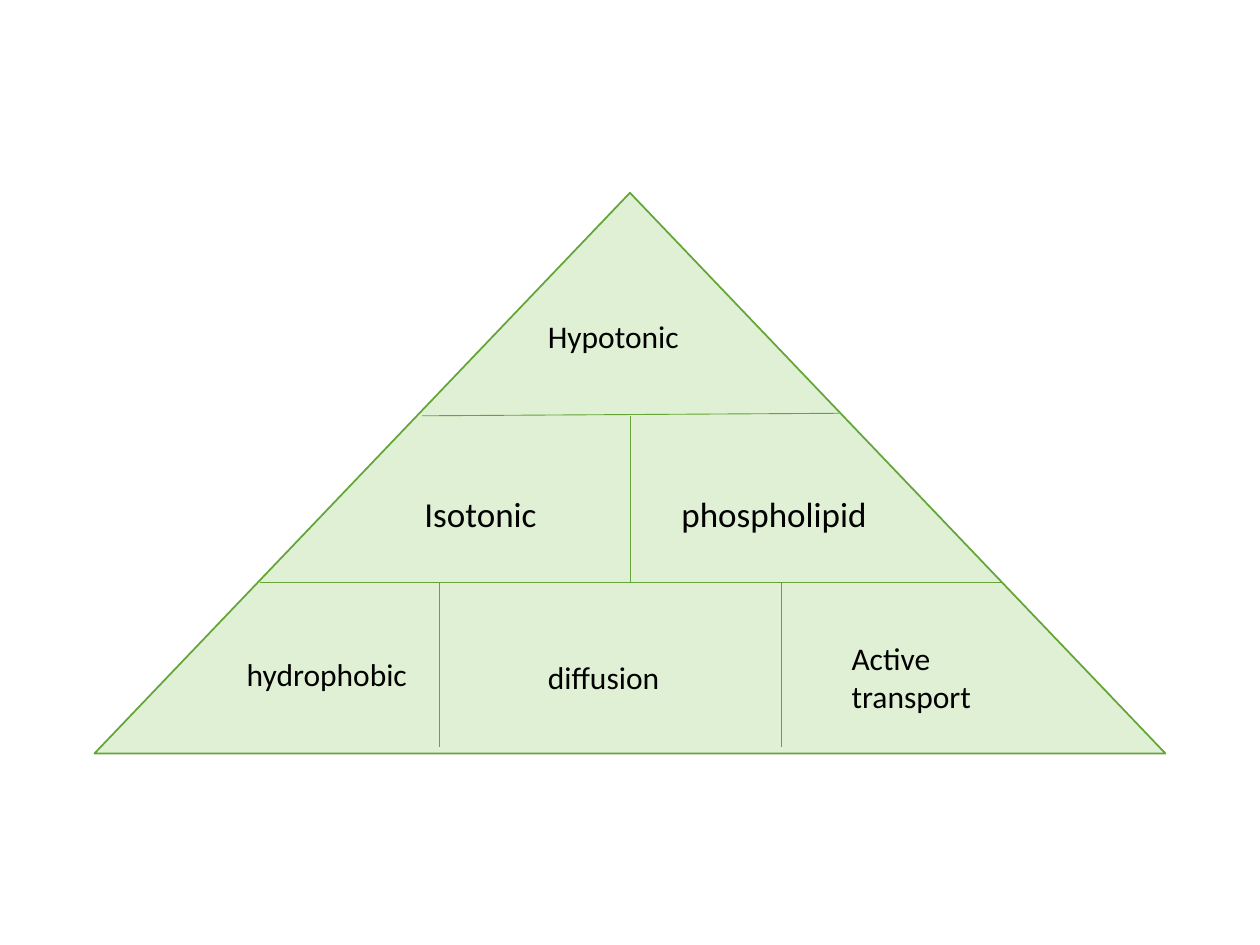
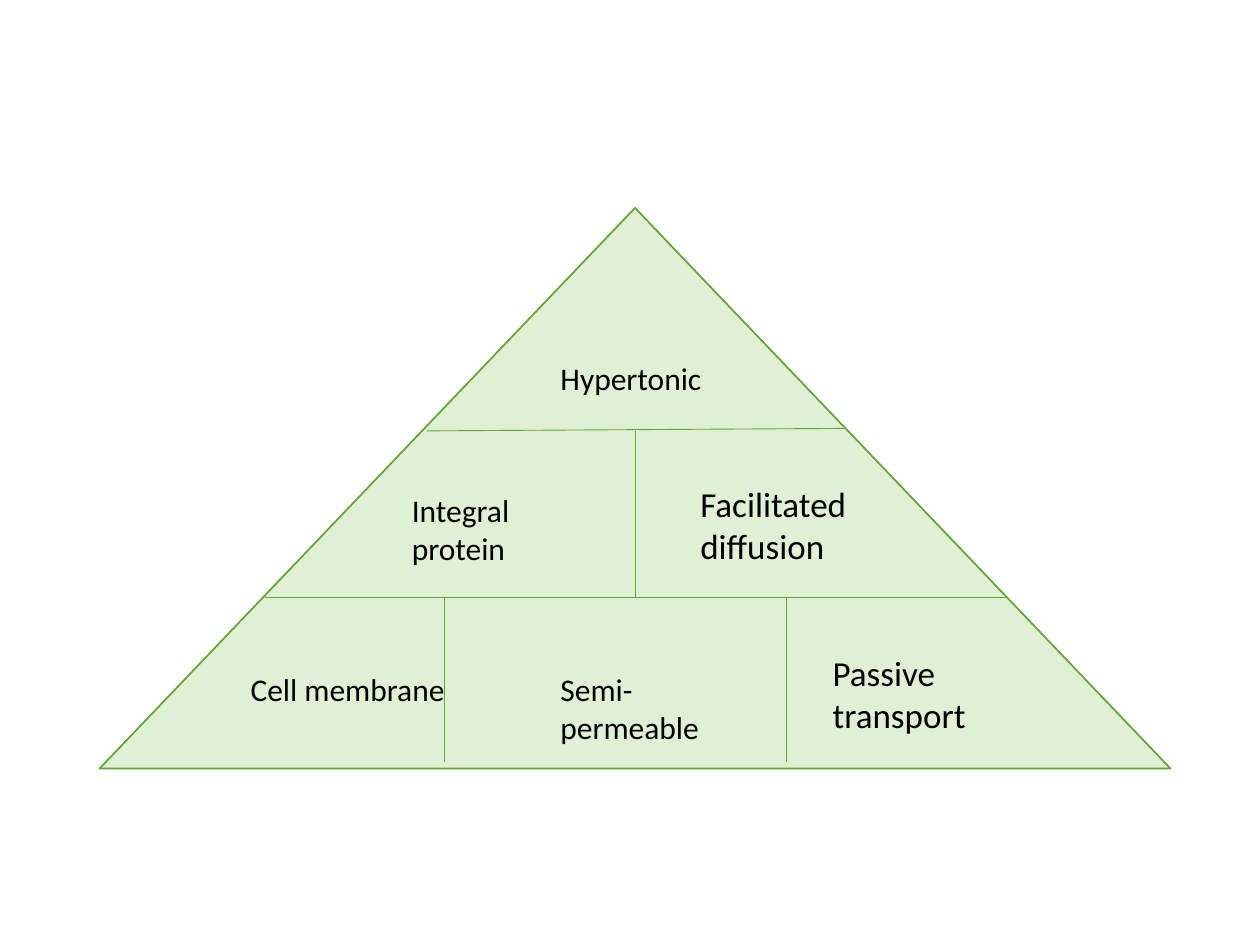
from lxml import etree
from pptx import Presentation
from pptx.dml.color import RGBColor
from pptx.enum.shapes import MSO_CONNECTOR as CONN, MSO_SHAPE as SHAPE
from pptx.enum.text import MSO_AUTO_SIZE as AUTO
from pptx.oxml.ns import qn
from pptx.util import Inches, Pt

GREEN, PALE, BLACK = "63A537", "DFF0D4", "000000"
FONT = "Calibri"
WIDTH, HEIGHT = 8.5, 4.45

# Dividers as x1, y1, x2, y2, measured from the pyramid's top left corner
TIER_1, TIER_2, FOOT = 1.77, 3.09, 4.4
DIVIDERS = [
    (1.31, TIER_2, 7.2, TIER_2),
    (2.6, TIER_1, 5.91, TIER_1 - 0.02),
    (WIDTH / 2, TIER_1, WIDTH / 2, TIER_2),
    (2.74, TIER_2, 2.74, FOOT),
    (5.45, TIER_2, 5.45, FOOT),
]

# Pyramid corner, then labels as text, left, top, width, height, size
PYRAMIDS = [
    ((0.75, 1.53), [
        ("Hypotonic", 4.25, 2.47, 1.63, 0.4, 18),
        ("Isotonic", 3.27, 3.86, 1.74, 0.44, 20),
        ("phospholipid", 5.31, 3.86, 1.77, 0.44, 20),
        ("hydrophobic", 1.86, 5.15, 1.74, 0.4, 18),
        ("diffusion", 4.25, 5.17, 1.52, 0.4, 18),
        ("Active transport", 6.66, 5.02, 1.29, 0.71, 18),
    ]),
    ((0.79, 1.65), [
        ("Hypertonic", 4.35, 2.8, 1.56, 0.4, 18),
        ("Integral protein", 3.17, 3.85, 1.52, 0.71, 18),
        ("Facilitated diffusion", 5.46, 3.78, 1.77, 0.77, 20),
        ("Cell membrane", 1.89, 5.27, 1.74, 0.71, 18),
        ("Semi-permeable", 4.35, 5.27, 1.74, 0.71, 18),
        ("Passive transport", 6.51, 5.12, 1.77, 0.77, 20),
    ]),
]


def paint(color_format, color):
    """Set a fill's, line's or font's colour from a hex string."""
    color_format.rgb = RGBColor.from_string(color)


prs = Presentation()
prs.slide_width, prs.slide_height = Inches(10), Inches(7.5)

for (left, top), labels in PYRAMIDS:
    s = prs.slides.add_slide(prs.slide_layouts[6])

    sp = s.shapes.add_shape(SHAPE.ISOSCELES_TRIANGLE, Inches(left), Inches(top),
                            Inches(WIDTH), Inches(HEIGHT))
    sp.shadow.inherit = False
    sp.fill.solid()
    paint(sp.fill.fore_color, PALE)
    paint(sp.line.color, GREEN)
    sp.line.width = Pt(1)

    for x1, y1, x2, y2 in DIVIDERS:
        line = s.shapes.add_connector(CONN.STRAIGHT, Inches(left + x1), Inches(top + y1),
                                      Inches(left + x2), Inches(top + y2))
        paint(line.line.color, GREEN)
        line.line.width = Pt(0.5)
        etree.SubElement(line._element.spPr, qn("a:effectLst"))

    for text, x, y, w, h, size in labels:
        tf = s.shapes.add_textbox(Inches(x), Inches(y), Inches(w), Inches(h)).text_frame
        tf.word_wrap = True
        tf.auto_size = AUTO.SHAPE_TO_FIT_TEXT
        tf.text = text
        font = tf.paragraphs[0].runs[0].font
        font.name, font.size = FONT, Pt(size)
        paint(font.color, BLACK)

prs.save("out.pptx")
